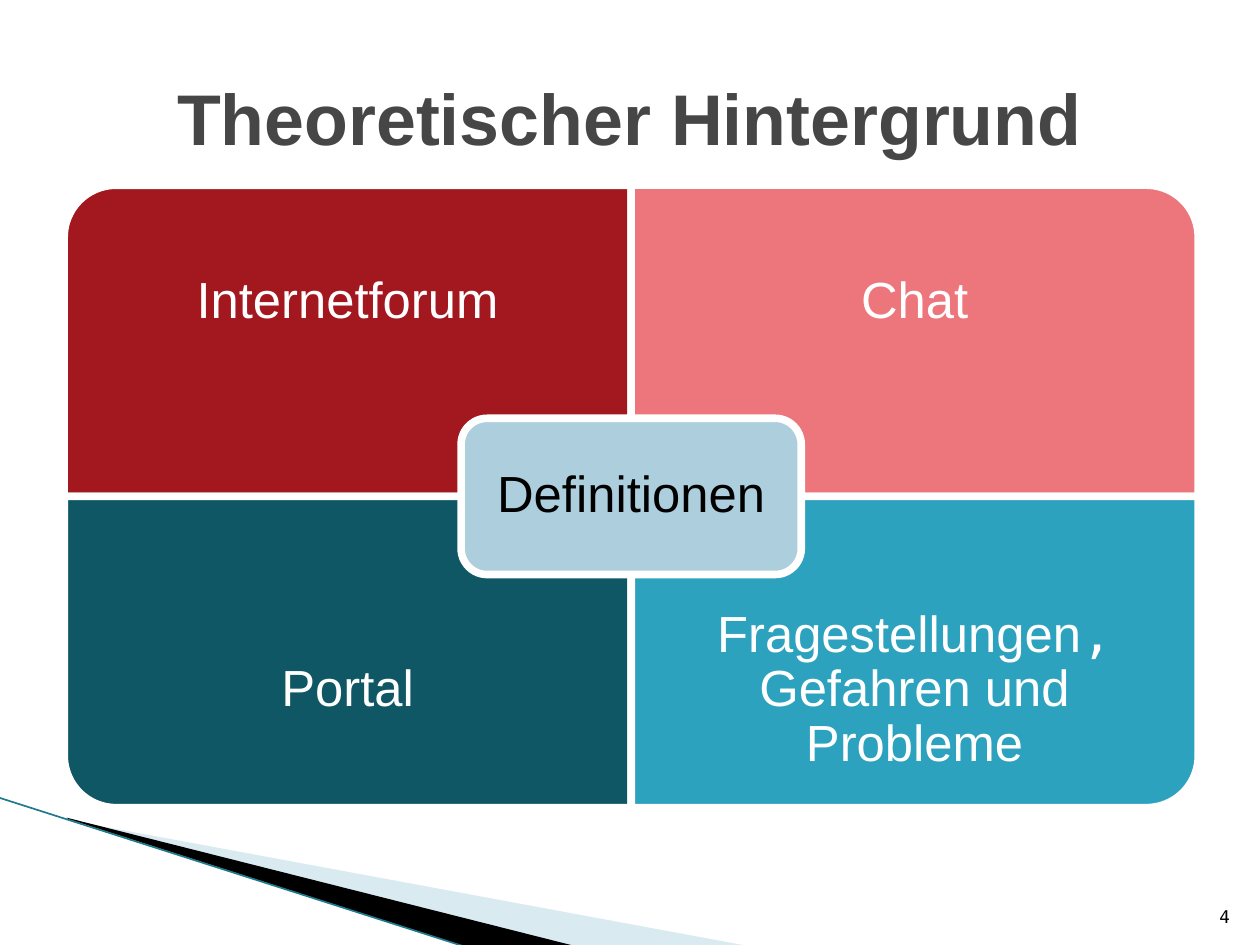
"""Build the slide on the theoretical background: four topics around a centre."""
import pptx
import pptx.dml.color
import pptx.enum.shapes
import pptx.enum.text
import pptx.oxml.ns
import pptx.util
from lxml import etree

Inches = pptx.util.Inches
Pt = pptx.util.Pt
SHAPE = pptx.enum.shapes.MSO_SHAPE
ALIGN = pptx.enum.text.PP_ALIGN
ANCHOR = pptx.enum.text.MSO_ANCHOR
qn = pptx.oxml.ns.qn


def rgb(value):
    return pptx.dml.color.RGBColor.from_string(value)


class SlideBuilder:
    """Holds the style and the current slide, and draws each kind of element."""

    sans = "Arial"
    mono = "DejaVu Sans Mono"
    white = "FFFFFF"
    black = "000000"
    label_size = 29
    border = 4.33

    def __init__(self, slide):
        self.slide = slide

    def add_runs(self, frame, runs, size, color, align=ALIGN.CENTER,
                 anchor=ANCHOR.MIDDLE, bold=False, spacing=None):
        frame.word_wrap = True
        frame.vertical_anchor = anchor
        paragraph = frame.paragraphs[0]
        paragraph.alignment = align
        paragraph.line_spacing = spacing
        for words, font in runs:
            run = paragraph.add_run()
            run.text = words
            run.font.name = font
            run.font.size = Pt(size)
            run.font.bold = bold
            run.font.color.rgb = rgb(color)

    def title(self, words, left, top, width, height):
        heading = self.slide.shapes.title
        heading.left, heading.top = Inches(left), Inches(top)
        heading.width, heading.height = Inches(width), Inches(height)
        self.add_runs(heading.text_frame, [(words, self.sans)], 41, "464646", bold=True)

    def text(self, runs, left, top, width, height, size, color, inset=None, **style):
        box = self.slide.shapes.add_textbox(
            Inches(left), Inches(top), Inches(width), Inches(height))
        frame = box.text_frame
        if inset is not None:
            frame.margin_left = frame.margin_right = Inches(inset)
            frame.margin_top = frame.margin_bottom = Inches(inset)
        self.add_runs(frame, runs, size, color, **style)

    def label(self, runs, left, top, width, height, color, inset):
        self.text(runs, left, top, width, height, self.label_size, color,
                  inset, spacing=0.9)

    def panel(self, kind, left, top, width, height, fill, rotation=0):
        if rotation % 180:
            left += (width - height) / 2
            top += (height - width) / 2
            width, height = height, width
        panel = self.slide.shapes.add_shape(
            kind, Inches(left), Inches(top), Inches(width), Inches(height))
        panel.rotation = rotation
        panel.shadow.inherit = False
        panel.fill.solid()
        panel.fill.fore_color.rgb = rgb(fill)
        panel.line.color.rgb = rgb(self.white)
        panel.line.width = Pt(self.border)

    def wedge(self, points, fill, opacity=100):
        corners = [(Inches(x), Inches(y)) for x, y in points]
        builder = self.slide.shapes.build_freeform(*corners[0], scale=1.0)
        builder.add_line_segments(corners[1:], close=True)
        wedge = builder.convert_to_shape()
        wedge.shadow.inherit = False
        wedge.fill.solid()
        wedge.fill.fore_color.rgb = rgb(fill)
        wedge.line.fill.background()
        if opacity < 100:
            color = wedge._element.spPr.find(".//" + qn("a:srgbClr"))
            etree.SubElement(color, qn("a:alpha"), val=str(opacity * 1000))

    def line(self, start, end, color, width):
        line = self.slide.shapes.add_connector(
            pptx.enum.shapes.MSO_CONNECTOR.STRAIGHT,
            *(Inches(value) for value in start + end))
        line.line.color.rgb = rgb(color)
        line.line.width = Pt(width)
        etree.SubElement(line._element.spPr, qn("a:effectLst"))


def main():
    deck = pptx.Presentation()
    deck.slide_width, deck.slide_height = Inches(10), Inches(7.5)
    page = SlideBuilder(deck.slides.add_slide(deck.slide_layouts[5]))

    page.wedge([(0.55, 6.51), (5.95, 7.51), (4.56, 7.51), (0.55, 6.5)], "A0CBDC", 40)
    page.wedge([(0.53, 6.49), (4.57, 7.51), (3.72, 7.52), (0.54, 6.5)], page.black)
    page.line((-0.01, 6.33), (3.71, 7.52), "1F7A8C", 0.95)

    left, top, width, height = 0.51, 1.47, 4.5, 2.47
    label_height = 1.86
    topics = [
        ([("Internetforum", page.sans)], "A3171E", 270),
        ([("Chat", page.sans)], "EC767C", 0),
        ([("Portal", page.sans)], "105766", 180),
        ([("Fragestellungen", page.sans), (", ", page.mono),
          ("Gefahren und Probleme", page.sans)], "2DA2BF", 90),
    ]
    for index, (topic, fill, rotation) in enumerate(topics):
        row, column = divmod(index, 2)
        x, y = left + column * width, top + row * height
        page.panel(SHAPE.ROUND_1_RECTANGLE, x, y, width, height, fill, rotation)
        label_top = y + row * (height - label_height)
        page.label(topic, x, label_top, width, label_height, page.white, 0.23)

    page.panel(SHAPE.ROUNDED_RECTANGLE, 3.66, 3.32, 2.7, 1.24, "ADCEDC")
    page.label([("Definitionen", page.sans)], 3.72, 3.38, 2.58, 1.12, page.black, 0.12)

    page.title("Theoretischer Hintergrund", 0.5, 0.3, 9, 1.25)
    page.text([("4", page.mono)], 9.46, 7.01, 0.4, 0.4, 10, page.black,
              align=ALIGN.RIGHT, anchor=ANCHOR.BOTTOM)

    deck.save("out.pptx")


if __name__ == "__main__":
    main()
